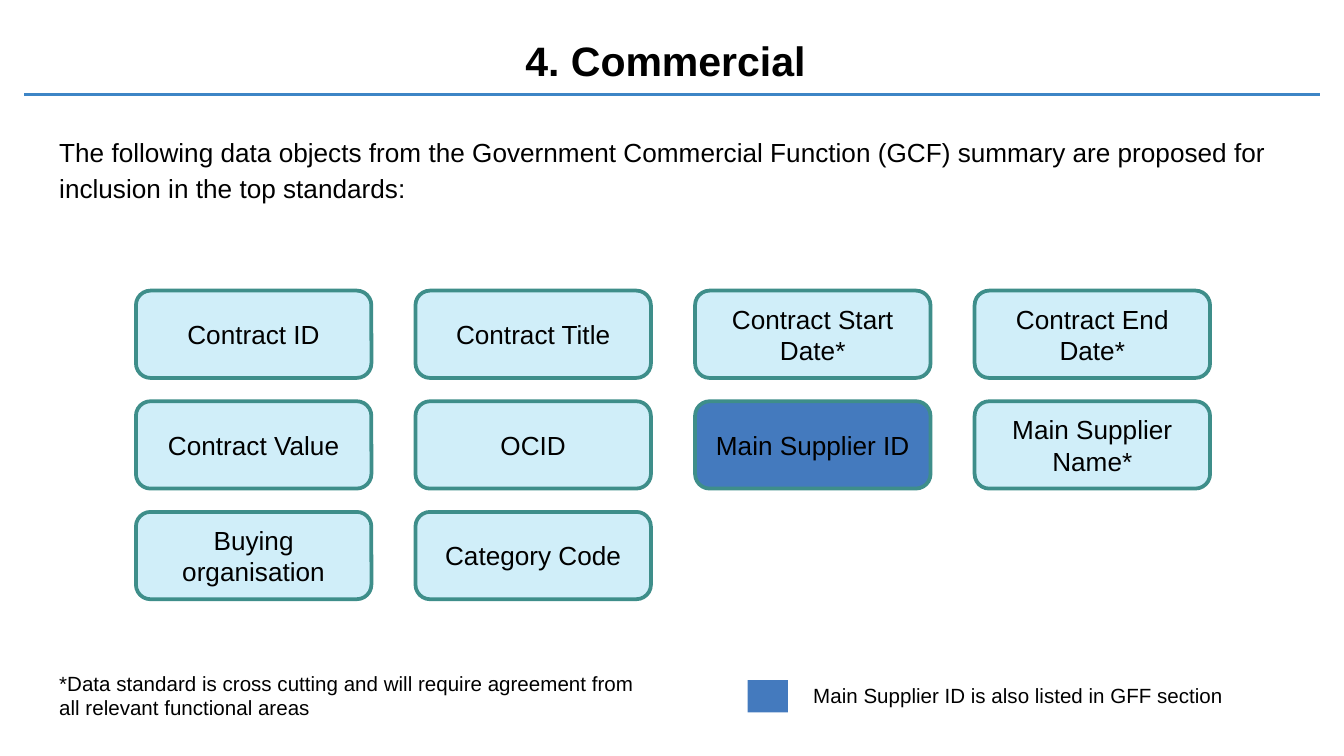
from lxml import etree
from pptx import Presentation, util as u
from pptx.dml.color import RGBColor
from pptx.enum import shapes, text
from pptx.oxml.ns import qn

HUES = {"ink": "000000", "rule": "3D85C6", "pale": "D0EEF9",
        "edge": "3E8E8A", "blue": "447ABE", "white": "FFFFFF"}
ITEMS = [
    ["Contract ID", "Contract Title", "Contract Start Date*", "Contract End Date*"],
    ["Contract Value", "OCID", "Main Supplier ID", "Main Supplier Name*"],
    ["Buying organisation", "Category Code"],
]
SHARED = "Main Supplier ID"


def hue(name):
    return RGBColor.from_string(HUES[name])


def write(shape, words, size, pad=(0.25, 0.25), bold=False, mid=False, gap=None):
    """Fill a shape with one paragraph; pad is (side, top) in cm."""
    frame = shape.text_frame
    frame.text = words
    frame.word_wrap = True
    frame.margin_left = frame.margin_right = u.Cm(pad[0])
    frame.margin_top = frame.margin_bottom = u.Cm(pad[1])
    frame.vertical_anchor = text.MSO_ANCHOR.MIDDLE if mid else text.MSO_ANCHOR.TOP
    para = frame.paragraphs[0]
    para.alignment = text.PP_ALIGN.CENTER if mid else text.PP_ALIGN.LEFT
    if gap:
        para.line_spacing = gap
    font = para.runs[0].font
    font.name, font.size, font.bold = "Arial", u.Pt(size), bold
    font.color.rgb = hue("ink")


def label(slide, box, words, size, **look):
    area = slide.shapes.add_textbox(*map(u.Cm, box))
    write(area, words, size, **look)


def block(slide, kind, box, fill, edge=None):
    shape = slide.shapes.add_shape(kind, *map(u.Cm, box))
    shape.shadow.inherit = False
    shape.fill.solid()
    shape.fill.fore_color.rgb = hue(fill)
    if edge:
        shape.line.color.rgb = hue(edge)
        shape.line.width = u.Pt(2)
    else:
        shape.line.fill.background()
    return shape


def header(slide, box):
    left, top, wide, high = box
    # Rule under the title
    base = u.Cm(top + high - 0.1)
    rule = slide.shapes.add_connector(
        shapes.MSO_CONNECTOR.STRAIGHT, u.Cm(0.46), base, u.Cm(24.94), base)
    rule.line.color.rgb = hue("rule")
    rule.line.width = u.Pt(1.5)
    etree.SubElement(rule._element.spPr, qn("a:effectLst"))
    # Title
    label(slide, box, "4. Commercial", 22, pad=(0.18, 0.1), bold=True, mid=True)


def grid(slide, box):
    left, top, wide, high = box
    tile_w, tile_h = 4.45, 1.65
    step_x = (wide - tile_w) / 3
    step_y = (high - tile_h) / 2
    for row, names in enumerate(ITEMS):
        for col, name in enumerate(names):
            spot = (left + col * step_x, top + row * step_y, tile_w, tile_h)
            fill = "blue" if name == SHARED else "pale"
            tile = block(slide, shapes.MSO_SHAPE.ROUNDED_RECTANGLE, spot, fill, "edge")
            write(tile, name, 14, pad=(0.25, 0.13), mid=True)


def footer(slide, box):
    left, top, wide, high = box
    # Footnote
    label(slide, (left, top, 11.84, high),
          "*Data standard is cross cutting and will require agreement from "
          "all relevant functional areas", 11)
    # Colour key
    rect = shapes.MSO_SHAPE.RECTANGLE
    block(slide, rect, (left + 13.26, top + 0.43, 0.76, 0.61), "blue")
    note = block(slide, rect, (left + 14.25, top + 0.23, wide - 14.25, 0.99), "white")
    write(note, "Main Supplier ID is also listed in GFF section", 11)


def main():
    deck = Presentation()
    deck.slide_width, deck.slide_height = u.Cm(25.4), u.Cm(14.28)
    slide = deck.slides.add_slide(deck.slide_layouts[6])
    header(slide, (0.64, 0.38, 23.88, 1.5))
    # Introduction
    label(slide, (0.87, 2.24, 23.67, 1.65),
          "The following data objects from the Government Commercial Function "
          "(GCF) summary are proposed for inclusion in the top standards:",
          14, gap=1.15)
    grid(slide, (2.57, 5.49, 20.3, 5.83))
    footer(slide, (0.87, 12.42, 23.52, 1.45))
    deck.save("out.pptx")


if __name__ == "__main__":
    main()
